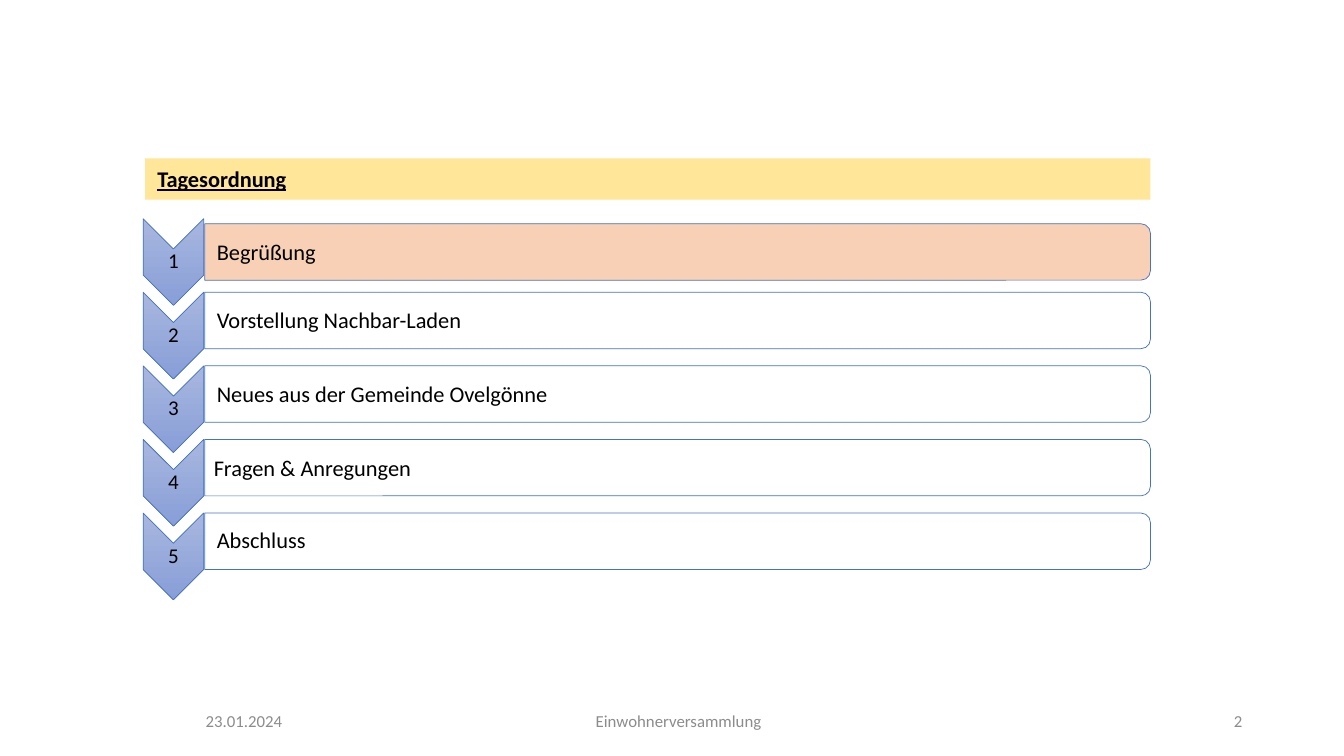
from pptx import Presentation
from pptx.dml.color import RGBColor
from pptx.enum.shapes import MSO_SHAPE
from pptx.enum.text import MSO_ANCHOR, PP_ALIGN
from pptx.oxml.ns import qn
from pptx.util import Inches, Pt
from lxml.etree import SubElement

BLACK = RGBColor(0x00, 0x00, 0x00)
WHITE = RGBColor(0xFF, 0xFF, 0xFF)
GREY = RGBColor(0x8C, 0x8C, 0x8C)
BLUE = RGBColor(0x44, 0x72, 0xC4)
LIGHT_BLUE = RGBColor(0xA8, 0xB7, 0xDF)
MID_BLUE = RGBColor(0x88, 0x9E, 0xD7)
PEACH = RGBColor(0xF8, 0xCB, 0xAD)
YELLOW = RGBColor(0xFF, 0xE6, 0x99)

# Agenda text, bar colour, left inset, line spacing
AGENDA = [
    ("Begrüßung", PEACH, 0.12, 1.0),
    ("Vorstellung Nachbar-Laden", WHITE, 0.12, 1.0),
    ("Neues aus der Gemeinde Ovelgönne", WHITE, 0.12, 1.0),
    ("Fragen & Anregungen", WHITE, 0.09, 1.0),
    ("Abschluss", WHITE, 0.12, 0.9),
]
FOOTER = [
    ("23.01.2024", 0.92, 3, PP_ALIGN.CENTER),
    ("Einwohnerversammlung", 4.12, 5.22, PP_ALIGN.CENTER),
    ("2", 9.42, 3, PP_ALIGN.RIGHT),
]
PITCH = 0.73


def write(sp, text, size, color=BLACK, align=PP_ALIGN.LEFT, left=0.01, margin=0.01):
    tf = sp.text_frame
    tf.word_wrap = True
    tf.vertical_anchor = MSO_ANCHOR.MIDDLE
    tf.margin_left = Inches(left)
    tf.margin_right = tf.margin_top = tf.margin_bottom = Inches(margin)
    p = tf.paragraphs[0]
    p.text = text
    p.alignment = align
    p.font.name = "Calibri"
    p.font.size = Pt(size)
    p.font.color.rgb = color
    return p


def add_label(slide, x, y, w, h, *args, **kwargs):
    sp = slide.shapes.add_textbox(Inches(x), Inches(y), Inches(w), Inches(h))
    return write(sp, *args, **kwargs)


def add_turned_shape(slide, kind, cx, cy, w, h):
    """Add a blue-edged shape centred on cx, cy and turned by 90 degrees."""
    sp = slide.shapes.add_shape(
        kind, Inches(cx - w / 2), Inches(cy - h / 2), Inches(w), Inches(h))
    sp.rotation = 90
    sp.shadow.inherit = False
    sp.line.color.rgb = BLUE
    sp.line.width = Pt(0.5)
    return sp


def add_chevron(slide, number, cy):
    sp = add_turned_shape(slide, MSO_SHAPE.CHEVRON, 1.72, cy, 0.86, 0.6)
    sp.fill.gradient()
    sp.fill.gradient_angle = 270
    for stop, color in zip(sp.fill.gradient_stops, (LIGHT_BLUE, MID_BLUE)):
        stop.color.rgb = color
    # The gradient runs downwards on the slide, whatever the rotation
    sp._element.spPr.find(qn("a:gradFill")).set("rotWithShape", "0")
    p = add_label(slide, 1.42, cy - 0.13, 0.6, 0.26, str(number), 15,
                  align=PP_ALIGN.CENTER)
    p.line_spacing = 0.9


def add_bar(slide, text, color, cy, left, spacing):
    sp = add_turned_shape(
        slide, MSO_SHAPE.ROUND_2_SAME_RECTANGLE, 6.72, cy, 0.56, 9.38)
    sp.fill.solid()
    sp.fill.fore_color.rgb = color
    srgb = sp._element.spPr.find(qn("a:solidFill"))[0]
    SubElement(srgb, qn("a:alpha")).set("val", "90000")
    p = add_label(slide, 2.03, cy - 0.26, 9.35, 0.51, text, 16, left=left)
    p.line_spacing = spacing


def add_heading(slide, text):
    sp = slide.shapes.add_shape(
        MSO_SHAPE.RECTANGLE, Inches(1.44), Inches(1.57), Inches(9.97), Inches(0.41))
    sp.shadow.inherit = False
    sp.fill.solid()
    sp.fill.fore_color.rgb = YELLOW
    sp.line.fill.background()
    p = write(sp, text, 16, left=0.12)
    p.font.bold = True
    p.font.underline = True


def main():
    prs = Presentation()
    prs.slide_width = Inches(13.33)
    prs.slide_height = Inches(7.5)
    slide = prs.slides.add_slide(prs.slide_layouts[6])

    for i, (text, color, left, spacing) in enumerate(AGENDA):
        add_chevron(slide, i + 1, 2.6 + i * PITCH)
        # The first bar sits a little lower than the even pitch
        bar_y = 2.5 if i == 0 else 2.45 + i * PITCH
        add_bar(slide, text, color, bar_y, left, spacing)

    for text, x, w, align in FOOTER:
        add_label(slide, x, 6.95, w, 0.4, text, 12, GREY, align, 0.1, 0.1)
    add_heading(slide, "Tagesordnung")

    prs.save("out.pptx")


if __name__ == "__main__":
    main()
